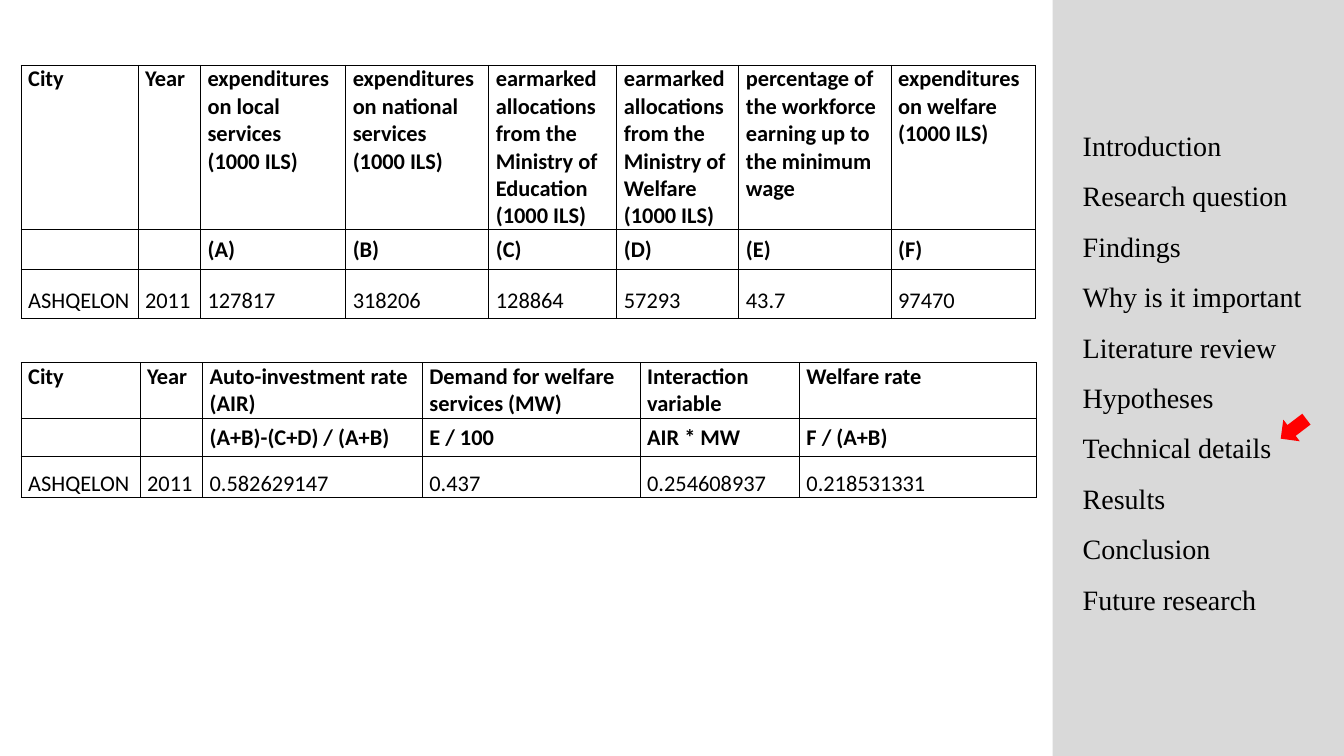
from lxml.etree import SubElement
from pptx import Presentation
from pptx.dml.color import RGBColor
from pptx.enum.shapes import MSO_SHAPE
from pptx.enum.text import MSO_ANCHOR
from pptx.oxml import parse_xml
from pptx.oxml.ns import nsdecls, qn
from pptx.util import Inches, Pt

TABLES = [
    {
        "top": 0.65,
        "cols": [1.16, 0.62, 1.44, 1.42, 1.27, 1.21, 1.51, 1.43],
        "heights": [1.63, 0.39, 0.49],
        "anchors": [MSO_ANCHOR.TOP, MSO_ANCHOR.MIDDLE, MSO_ANCHOR.MIDDLE],
        "rows": [
            ["City", "Year",
             "expenditures on local services (1000 ILS)",
             "expenditures on national services (1000 ILS)",
             "earmarked allocations from the Ministry of Education (1000 ILS)",
             "earmarked allocations from the Ministry of Welfare (1000 ILS)",
             "percentage of the workforce earning up to the minimum wage",
             "expenditures on welfare (1000 ILS)"],
            ["", "", "(A)", "(B)", "(C)", "(D)", "(E)", "(F)"],
            ["ASHQELON", "2011", "127817", "318206", "128864", "57293", "43.7", "97470"],
        ],
    },
    {
        "top": 3.6,
        "cols": [1.18, 0.62, 2.18, 2.16, 1.58, 2.35],
        "heights": [0.55, 0.38, 0.4],
        "anchors": [MSO_ANCHOR.TOP, MSO_ANCHOR.MIDDLE, MSO_ANCHOR.TOP],
        "rows": [
            ["City", "Year", "Auto-investment rate (AIR)",
             "Demand for welfare services (MW)", "Interaction variable", "Welfare rate"],
            ["", "", "(A+B)-(C+D) / (A+B)", "E / 100", "AIR * MW", "F / (A+B)"],
            ["ASHQELON", "2011", "0.582629147", "0.437", "0.254608937", "0.218531331"],
        ],
    },
]
SECTIONS = ["Introduction", "Research question", "Findings", "Why is it important",
            "Literature review", "Hypotheses", "Technical details", "Results",
            "Conclusion", "Future research"]
LEFT = 0.21
CELL = {"margin_left": Inches(0.07), "margin_right": Inches(0.07),
        "margin_top": 0, "margin_bottom": 0}
TABLE_FONT = {"name": "Calibri", "size": Pt(16)}
MENU_FONT = {"name": "Times New Roman", "size": Pt(20)}


def rgb(value):
    return RGBColor.from_string(value)


def apply(target, values):
    for name, value in values.items():
        setattr(target, name, value)


def add_text(p, text, font, spacing):
    p.line_spacing = spacing
    r = p.add_run()
    r.text = text
    apply(r.font, font)
    r.font.color.rgb = rgb("000000")


def add_borders(cell):
    tc_pr = cell._tc.get_or_add_tcPr()
    for i, side in enumerate("LRTB"):
        ln = parse_xml(f'<a:ln{side} {nsdecls("a")} w="{Pt(1)}"/>')
        fill = SubElement(ln, qn("a:solidFill"))
        SubElement(fill, qn("a:srgbClr"), val="000000")
        tc_pr.insert(i, ln)


def add_data_table(s, data):
    cols, heights = data["cols"], data["heights"]
    table = s.shapes.add_table(
        len(heights), len(cols), Inches(LEFT), Inches(data["top"]),
        Inches(sum(cols)), Inches(sum(heights))).table
    apply(table, {"first_row": False, "horz_banding": False})
    for col, width in zip(table.columns, cols):
        col.width = Inches(width)
    for i, (row, height) in enumerate(zip(table.rows, heights)):
        row.height = Inches(height)
        is_value = i == len(heights) - 1
        for cell, text in zip(row.cells, data["rows"][i]):
            apply(cell, {**CELL, "vertical_anchor": data["anchors"][i]})
            cell.fill.background()
            add_borders(cell)
            if text:
                add_text(cell.text_frame.paragraphs[0], text,
                         {**TABLE_FONT, "bold": not is_value}, 1.5 if is_value else 1.0)


def add_block(s, kind, box, color):
    sp = s.shapes.add_shape(kind, *map(Inches, box))
    sp.shadow.inherit = False
    sp.fill.solid()
    sp.fill.fore_color.rgb = rgb(color)
    sp.line.fill.background()
    return sp


def add_menu(s):
    tf = s.shapes.add_textbox(*map(Inches, (10.64, 1.06, 2.44, 5.15))).text_frame
    tf.word_wrap = True
    for i, section in enumerate(SECTIONS):
        p = tf.add_paragraph() if i else tf.paragraphs[0]
        add_text(p, section, MENU_FONT, 1.5)


def main():
    prs = Presentation()
    apply(prs, {"slide_width": Inches(13.33), "slide_height": Inches(7.5)})
    s = prs.slides.add_slide(prs.slide_layouts[6])
    add_block(s, MSO_SHAPE.RECTANGLE, (10.44, -0.08, 2.89, 7.88), "D9D9D9")
    for data in TABLES:
        add_data_table(s, data)
    add_menu(s)
    arrow = add_block(s, MSO_SHAPE.RIGHT_ARROW, (12.67, 4.12, 0.32, 0.27), "FF0000")
    arrow.rotation = 142.7
    prs.save("out.pptx")


if __name__ == "__main__":
    main()
